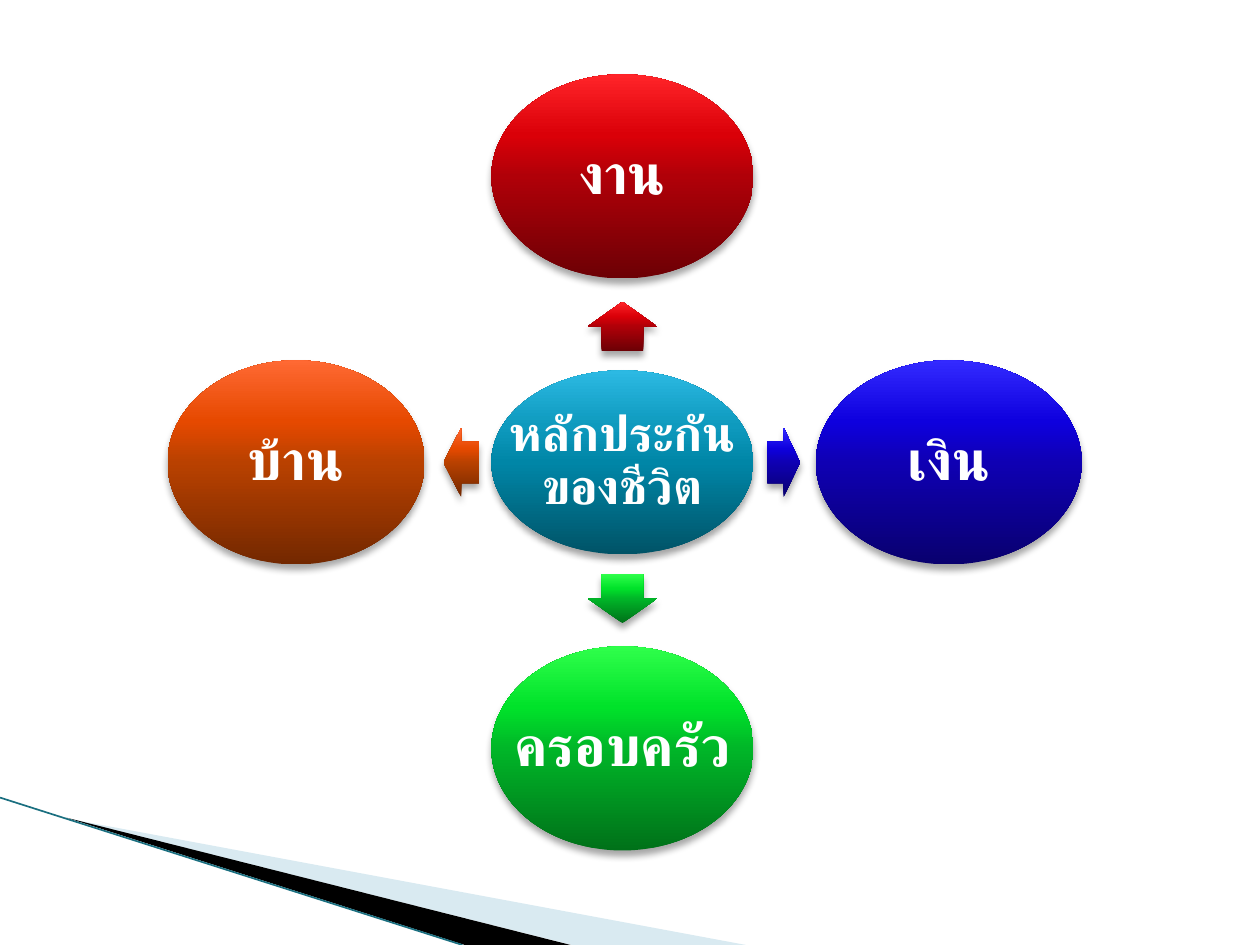
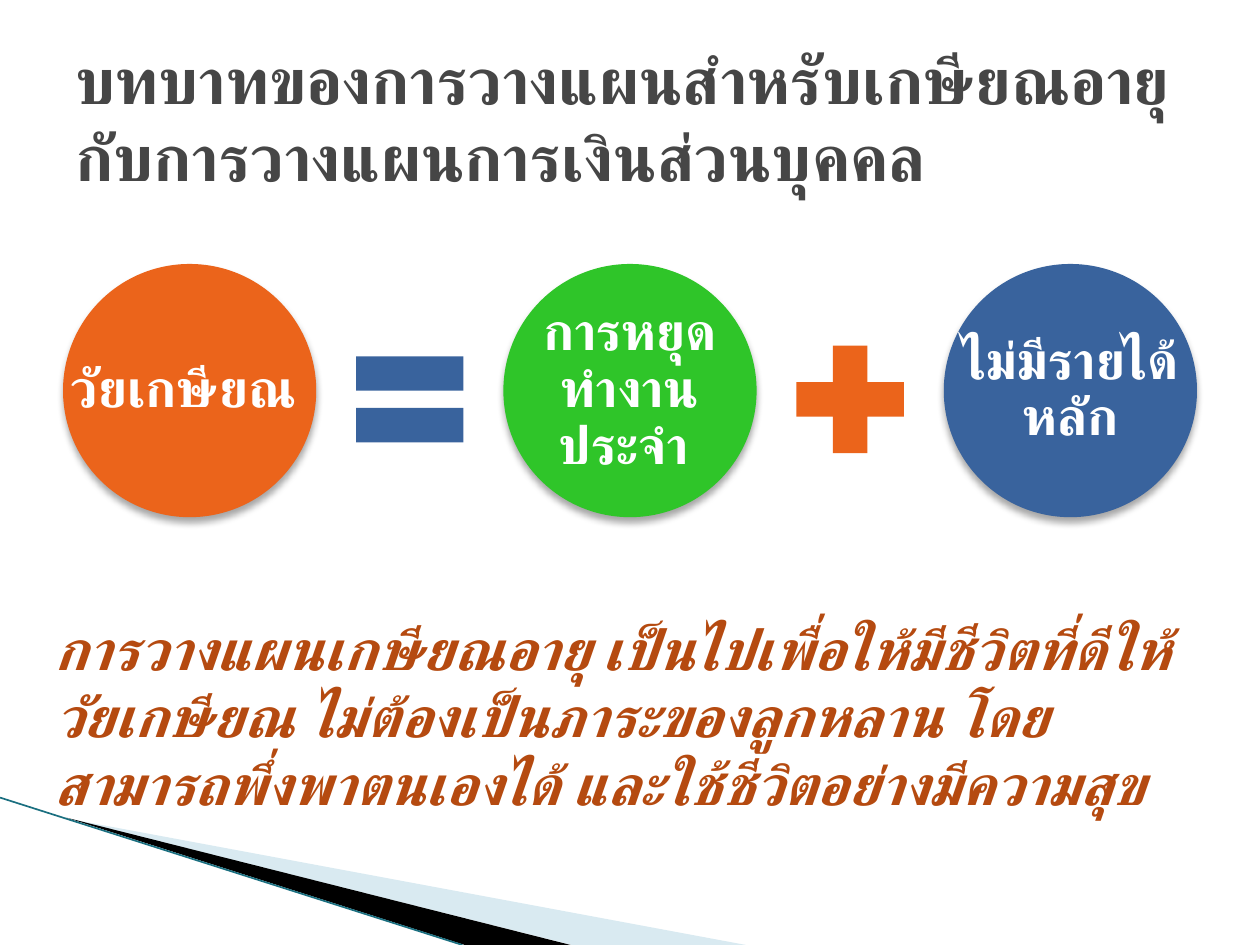
"""Build two slides on life security and planning for retirement."""
from dataclasses import dataclass
from lxml.etree import SubElement as Sub
from pptx import Presentation
from pptx.dml.color import RGBColor as RGB
from pptx.enum.shapes import MSO_CONNECTOR as Conn, MSO_SHAPE as Geo
from pptx.enum.text import MSO_ANCHOR as Anchor, PP_ALIGN as Align
from pptx.oxml.ns import qn
from pptx.util import Inches, Pt


@dataclass(frozen=True)
class Theme:
    font: str = "Lato"
    white: str = "FFFFFF"
    ink: str = "464646"
    rust: str = "B54A10"
    orange: str = "EB641B"
    green: str = "2FC529"
    blue: str = "39639D"
    pale: str = "D9EAF1"
    black: str = "000000"
    teal: str = "1A6F80"
    title: float = 36.9
    body: float = 32
    node: float = 32
    hub: float = 28
    disc: float = 30


T = Theme()
STOPS = (0, 50, 70, 100)
SHADES = {
    "aqua": ("005367", "0086A7", "0E9ABE", "2CB9E3"),
    "red": ("6D0005", "B00008", "DA0008", "FF2429"),
    "blue": ("09006F", "0F00B3", "0E00DE", "332AFF"),
    "green": ("007119", "00B628", "00E22A", "2FFF4B"),
    "orange": ("732800", "B94100", "E64900", "FF6933"),
}

HUB = "หลักประกันของชีวิต"
NODES = [
    ("งาน", "red", (0, -1), 2.08, 0.39, 270),
    ("เงิน", "blue", (1, 0), 2.11, 0.26, 0),
    ("ครอบครัว", "green", (0, 1), 2.08, 0.39, 90),
    ("บ้าน", "orange", (-1, 0), 2.04, 0.28, 180),
]
MID = (4.94, 3.67)
REACH = (2.59, 2.27)
HOP = (1.28, 1.08)

TITLE = "บทบาทของการวางแผนสำหรับเกษียณอายุกับการวางแผนการเงินส่วนบุคคล"
DISCS = [
    ("วัยเกษียณ ", T.orange),
    ("การหยุดทำงานประจำ ", T.green),
    ("ไม่มีรายได้หลัก", T.blue),
]
SIGNS = [(Geo.MATH_EQUAL, T.blue), (Geo.MATH_PLUS, T.orange)]
BODY = ("การวางแผนเกษียณอายุ เป็นไปเพื่อให้มีชีวิตที่ดีให้วัยเกษียณ "
        "ไม่ต้องเป็นภาระของลูกหลาน โดยสามารถพึ่งพาตนเองได้ "
        "และใช้ชีวิตอย่างมีความสุข")
FIRST, STEP, SIZE, SIGN = 0.5, 3.495, 2.01, 1.16
ROW, LINE = 3.1, 3.17

WEDGES = [
    (T.pale, [(0.55, 6.5), (5.92, 7.5), (4.54, 7.5)]),
    (T.black, [(0.53, 6.49), (4.53, 7.5), (3.69, 7.5)]),
]
EDGE = (0, 6.33, 3.67, 7.5)


def box(mid, wide, high):
    """Return a frame centred on a point."""
    return [Inches(v) for v in
            (mid[0] - wide / 2, mid[1] - high / 2, wide, high)]


def paint(shape, tint):
    """Fill with a plain colour or a named shade, without line or shadow."""
    shape.shadow.inherit = False
    shape.line.fill.background()
    fill = shape.fill
    if tint not in SHADES:
        fill.solid()
        fill.fore_color.rgb = RGB.from_string(tint)
        return
    fill.gradient()
    fill.gradient_angle = 90
    grad = shape._element.spPr.find(qn("a:gradFill"))
    grad.set("rotWithShape", "0")
    stops = grad.find(qn("a:gsLst"))
    for old in list(stops):
        stops.remove(old)
    for pos, hue in zip(STOPS, SHADES[tint]):
        stop = Sub(stops, qn("a:gs"), pos=str(pos * 1000))
        Sub(stop, qn("a:srgbClr"), val=hue)


def shade(shape):
    """Add a soft drop shadow."""
    fx = shape._element.spPr.find(qn("a:effectLst"))
    drop = Sub(fx, qn("a:outerShdw"), blurRad=str(Pt(4)), dist=str(Pt(3)),
               dir="5400000", rotWithShape="0")
    hue = Sub(drop, qn("a:srgbClr"), val=T.black)
    Sub(hue, qn("a:alpha"), val="35000")


def draw(slide, geo, frame, tint, drop=True):
    """Add a painted preset shape."""
    shape = slide.shapes.add_shape(geo, *frame)
    paint(shape, tint)
    if drop:
        shade(shape)
    return shape


def write(slide, frame, text, size, hue, slant=False, anchor=Anchor.TOP):
    """Add a wrapped text box with one bold run."""
    tf = slide.shapes.add_textbox(*frame).text_frame
    tf.word_wrap = True
    tf.vertical_anchor = anchor
    run = tf.paragraphs[0].add_run()
    run.text = text
    font = run.font
    font.name, font.size, font.bold = T.font, Pt(size), True
    font.color.rgb = RGB.from_string(hue)
    if slant:
        font.italic = True
    Sub(run._r.get_or_add_rPr(), qn("a:cs"), typeface=T.font)
    return tf


def oval(slide, mid, wide, high, tint, text, size):
    """Add an ellipse with a centred label."""
    frame = box(mid, wide, high)
    draw(slide, Geo.OVAL, frame, tint)
    tf = write(slide, frame, text, size, T.white, anchor=Anchor.MIDDLE)
    tf.margin_left = tf.margin_right = Inches(0.04)
    tf.margin_top = tf.margin_bottom = Inches(0.04)
    para = tf.paragraphs[0]
    para.alignment = Align.CENTER
    para.line_spacing = 0.9


def page(deck):
    """Add a blank slide with the corner wedges."""
    slide = deck.slides.add_slide(deck.slide_layouts[6])
    for tint, spots in WEDGES:
        first, *rest = [(Inches(x), Inches(y)) for x, y in spots]
        pen = slide.shapes.build_freeform(*first)
        pen.add_line_segments(rest, close=True)
        paint(pen.convert_to_shape(), tint)
    edge = slide.shapes.add_connector(
        Conn.STRAIGHT, *[Inches(v) for v in EDGE])
    edge.line.color.rgb = RGB.from_string(T.teal)
    edge.line.width = Pt(0.95)
    Sub(edge._element.spPr, qn("a:effectLst"))
    return slide


def wheel(deck):
    """Draw the hub and its four nodes."""
    slide = page(deck)
    oval(slide, MID, 2.08, 1.46, "aqua", HUB, T.hub)
    for text, tint, way, wide, long, turn in NODES:
        hop, end = ([m + w * g for m, w, g in zip(MID, way, gap)]
                    for gap in (HOP, REACH))
        arrow = draw(slide, Geo.RIGHT_ARROW, box(hop, long, 0.55), tint)
        arrow.adjustments[0] = 0.6
        arrow.adjustments[1] = 0.5
        arrow.rotation = turn
        oval(slide, end, wide, 1.62, tint, text, T.node)


def sums(deck):
    """Draw the title, the equation of discs and the closing text."""
    slide = page(deck)
    mids = [FIRST + SIZE / 2 + STEP * i for i in range(len(DISCS))]
    for x, (text, tint) in zip(mids, DISCS):
        oval(slide, (x, ROW), SIZE, SIZE, tint, text, T.disc)
    for x, (geo, tint) in zip(mids, SIGNS):
        draw(slide, geo, box((x + STEP / 2, LINE), SIGN, SIGN), tint, False)
    write(slide, box((5, 0.93), 9, 1.25), TITLE, T.title, T.ink,
          anchor=Anchor.MIDDLE)
    write(slide, box((5, 5.65), 9.33, 1.64), BODY, T.body, T.rust, True)


def main():
    """Build and save the deck."""
    deck = Presentation()
    deck.slide_width, deck.slide_height = Inches(10), Inches(7.5)
    wheel(deck)
    sums(deck)
    deck.save("out.pptx")


if __name__ == "__main__":
    main()
